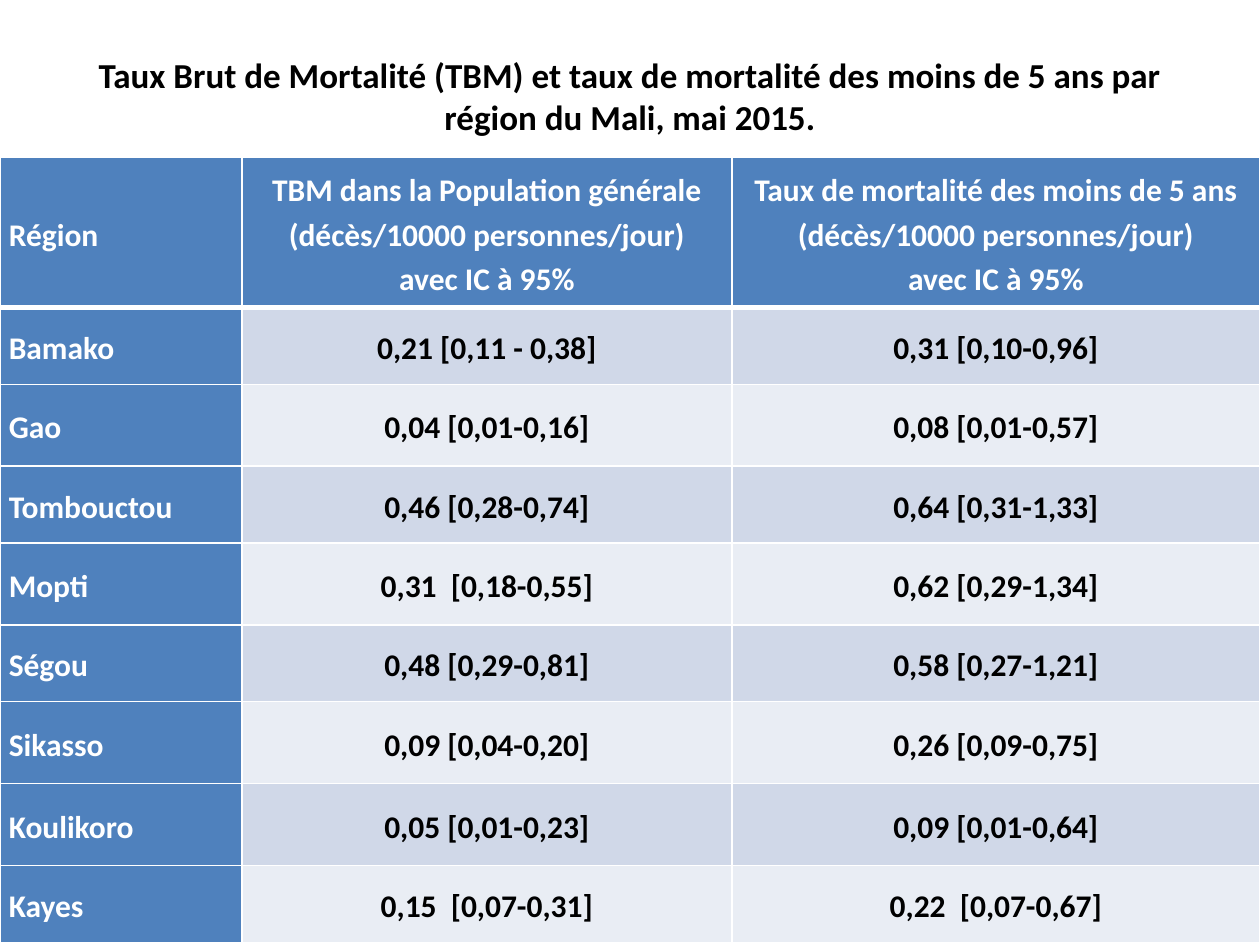
from lxml.etree import SubElement
from pptx import Presentation
from pptx.dml.color import RGBColor as RGB
from pptx.enum.text import MSO_ANCHOR as Anchor, PP_ALIGN as Align
from pptx.oxml.ns import qn
from pptx.util import Inches, Pt

COLORS = {"head": "4F81BD", "odd": "D0D8E8", "even": "E9EDF4",
          "light": "FFFFFF", "dark": "000000"}
FONT = "Calibri"
TITLE = ("Taux Brut de Mortalité (TBM) et taux de mortalité des moins "
         "de 5 ans par région du Mali, mai 2015.")
UNITS = "\n(décès/10000 personnes/jour)\navec IC à 95%"
COL_WIDTHS = [1.92, 3.89, 4.19]
HEAD_HEIGHT, SHORT, TALL = 1.19, 0.61, 0.65
TALL_REGIONS = {"Gao", "Mopti", "Sikasso", "Koulikoro"}
ROWS = [
    ("Région", "TBM dans la Population générale" + UNITS,
     "Taux de mortalité des moins de 5 ans" + UNITS),
    ("Bamako", "0,21 [0,11 - 0,38]", "0,31 [0,10-0,96]"),
    ("Gao", "0,04 [0,01-0,16]", "0,08 [0,01-0,57]"),
    ("Tombouctou", "0,46 [0,28-0,74]", "0,64 [0,31-1,33]"),
    ("Mopti", "0,31  [0,18-0,55]", "0,62 [0,29-1,34]"),
    ("Ségou", "0,48 [0,29-0,81]", "0,58 [0,27-1,21]"),
    ("Sikasso", "0,09 [0,04-0,20]", "0,26 [0,09-0,75]"),
    ("Koulikoro", "0,05 [0,01-0,23]", "0,09 [0,01-0,64]"),
    ("Kayes", "0,15  [0,07-0,31]", "0,22  [0,07-0,67]"),
]


def add_run(p, text, size, color):
    """Add one bold run to a paragraph."""
    r = p.add_run()
    r.text = text
    r.font.name, r.font.size, r.font.bold = FONT, Pt(size), True
    r.font.color.rgb = RGB.from_string(COLORS[color])


def set_borders(cell, top, bottom):
    """Draw white lines on the four sides of a cell."""
    tc_pr = cell._tc.get_or_add_tcPr()
    widths = {"a:lnL": 1, "a:lnR": 1, "a:lnT": top, "a:lnB": bottom}
    for i, (tag, width) in enumerate(widths.items()):
        ln = SubElement(tc_pr, qn(tag), w=str(Pt(width)))
        fill = SubElement(ln, qn("a:solidFill"))
        SubElement(fill, qn("a:srgbClr"), val=COLORS["light"])
        tc_pr.insert(i, ln)


def fill_cell(cell, text, align, fill, color):
    """Set the fill, margins and lines of text of a cell."""
    cell.fill.solid()
    cell.fill.fore_color.rgb = RGB.from_string(COLORS[fill])
    cell.vertical_anchor = Anchor.MIDDLE
    cell.margin_left = cell.margin_right = Inches(0.07)
    cell.margin_top = cell.margin_bottom = 0
    tf = cell.text_frame
    for i, line in enumerate(text.split("\n")):
        p = tf.add_paragraph() if i else tf.paragraphs[0]
        p.alignment, p.line_spacing = align, 1.15
        add_run(p, line, 18, color)


def add_title(s):
    """Place and format the title placeholder."""
    sp = s.shapes.title
    sp.left, sp.top, sp.width, sp.height = map(Inches, (0.5, 0.3, 9, 1.25))
    tf = sp.text_frame
    tf.word_wrap, tf.vertical_anchor = True, Anchor.MIDDLE
    tf.margin_bottom = Inches(0.38)
    p = tf.paragraphs[0]
    p.alignment = Align.CENTER
    add_run(p, TITLE, 20, "dark")


def add_mortality_table(s):
    """Add the table of mortality rates by region."""
    heights = [HEAD_HEIGHT] + [TALL if row[0] in TALL_REGIONS else SHORT
                               for row in ROWS[1:]]
    table = s.shapes.add_table(
        len(ROWS), len(COL_WIDTHS), 0, Inches(1.25),
        Inches(sum(COL_WIDTHS)), Inches(sum(heights))).table
    for col, width in zip(table.columns, COL_WIDTHS):
        col.width = Inches(width)
    for i, (row, height) in enumerate(zip(ROWS, heights)):
        table.rows[i].height = Inches(height)
        for j, text in enumerate(row):
            is_head = i == 0 or j == 0
            fill = "head" if is_head else "odd" if i % 2 else "even"
            cell = table.cell(i, j)
            fill_cell(cell, text, Align.CENTER if j else Align.LEFT, fill,
                      "light" if is_head else "dark")
            set_borders(cell, 3 if i == 1 else 1, 3 if i == 0 else 1)


def main():
    """Build the slide and save it."""
    prs = Presentation()
    prs.slide_width, prs.slide_height = Inches(10), Inches(7.5)
    s = prs.slides.add_slide(prs.slide_layouts[5])
    add_title(s)
    add_mortality_table(s)
    prs.save("out.pptx")


if __name__ == "__main__":
    main()
